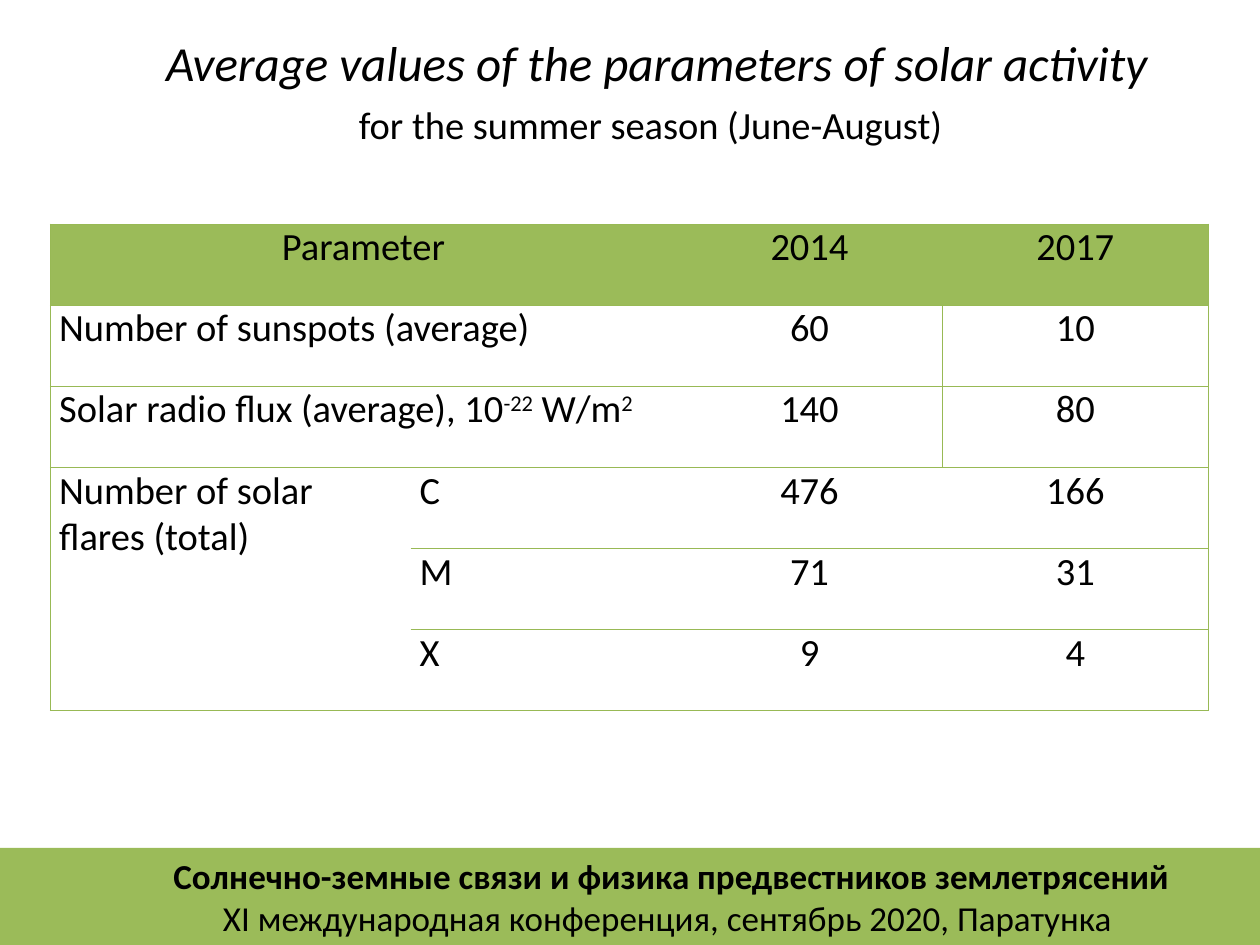
from dataclasses import dataclass

from lxml import etree
from pptx import Presentation
from pptx.dml.color import RGBColor
from pptx.enum import shapes, text
from pptx.oxml import ns
from pptx.util import Inches, Pt

COLORS = {"green": "9BBB59", "border": "98B955", "black": "000000"}
FONT = "Calibri"
CENTER = text.PP_ALIGN.CENTER
LEFT = text.PP_ALIGN.LEFT


@dataclass(frozen=True)
class Line:
    words: str
    size: int
    bold: bool = False
    italic: bool = False
    align: text.PP_ALIGN = CENTER


@dataclass(frozen=True)
class Entry:
    row: int
    col: int
    words: tuple[str, ...]
    align: text.PP_ALIGN = CENTER
    rows: int = 1
    cols: int = 1


def style(paragraph, line: Line) -> None:
    paragraph.alignment = line.align
    font = paragraph.font
    font.name = FONT
    font.size = Pt(line.size)
    font.bold = line.bold
    font.italic = line.italic
    font.color.rgb = RGBColor.from_string(COLORS["black"])


def add_lines(slide, left: float, top: float, width: float, height: float,
              lines: list[Line], wrap: bool = True) -> None:
    frame = slide.shapes.add_textbox(
        Inches(left), Inches(top), Inches(width), Inches(height)).text_frame
    frame.word_wrap = wrap
    frame.auto_size = text.MSO_AUTO_SIZE.SHAPE_TO_FIT_TEXT
    for index, line in enumerate(lines):
        paragraph = frame.add_paragraph() if index else frame.paragraphs[0]
        paragraph.add_run().text = line.words
        style(paragraph, line)


def set_borders(cell, sides: dict[str, bool]) -> None:
    properties = cell._tc.get_or_add_tcPr()
    for side, visible in sides.items():
        edge = etree.SubElement(properties, ns.qn(f"a:ln{side}"), w=str(Pt(0.75)))
        if visible:
            fill = etree.SubElement(edge, ns.qn("a:solidFill"))
            etree.SubElement(fill, ns.qn("a:srgbClr"), val=COLORS["border"])
        else:
            etree.SubElement(edge, ns.qn("a:noFill"))


def fill_entry(table, entry: Entry) -> None:
    cell = table.cell(entry.row, entry.col)
    if entry.rows > 1 or entry.cols > 1:
        cell.merge(table.cell(entry.row + entry.rows - 1, entry.col + entry.cols - 1))
    paragraph = cell.text_frame.paragraphs[0]
    for index, part in enumerate(entry.words):
        run = paragraph.add_run()
        run.text = part
        if index % 2:
            run._r.get_or_add_rPr().set("baseline", "30000")
    style(paragraph, Line("", 22, align=entry.align))


def add_solar_table(slide) -> None:
    row_count, col_count = 6, 4
    table = slide.shapes.add_table(
        row_count, col_count, Inches(0.4), Inches(1.78), Inches(9.19), Inches(3.86)).table
    table.first_row = table.horz_banding = False
    for column, width in zip(table.columns, (2.86, 2.11, 2.11, 2.11)):
        column.width = Inches(width)

    for row in range(row_count):
        for col in range(col_count):
            cell = table.cell(row, col)
            cell.margin_left = cell.margin_right = Inches(0.07)
            cell.margin_top = cell.margin_bottom = 0
            year_divider = row in (1, 2)
            set_borders(cell, {
                "L": col == 0 or (col == 3 and year_divider),
                "R": col == 3 or (col == 2 and year_divider),
                "T": col > 0 or row <= 3,
                "B": col > 0 or row != 4,
            })
            if row == 0:
                cell.fill.solid()
                cell.fill.fore_color.rgb = RGBColor.from_string(COLORS["green"])
            else:
                cell.fill.background()

    labels = [
        Entry(0, 0, ("Parameter",), cols=2),
        Entry(1, 0, ("Number of sunspots (average)",), LEFT, cols=2),
        Entry(2, 0, ("Solar radio flux (average), 10", "-22", " W/m", "2"), LEFT, cols=2),
        Entry(3, 0, ("Number of solar flares (total)",), LEFT, rows=3),
    ]
    flare_classes = [Entry(row, 1, (name,), LEFT) for row, name in enumerate("CMX", 3)]
    years = {
        2: ("2014", "60", "140", "476", "71", "9"),
        3: ("2017", "10", "80", "166", "31", "4"),
    }
    values = [Entry(row, col, (value,))
              for col, column in years.items() for row, value in enumerate(column)]
    for entry in labels + flare_classes + values:
        fill_entry(table, entry)


def main() -> None:
    presentation = Presentation()
    presentation.slide_width = Inches(10)
    presentation.slide_height = Inches(7.5)
    slide = presentation.slides.add_slide(presentation.slide_layouts[6])

    footer = slide.shapes.add_shape(
        shapes.MSO_SHAPE.RECTANGLE, 0, Inches(6.73), Inches(10), Inches(0.77))
    footer.shadow.inherit = False
    footer.fill.solid()
    footer.fill.fore_color.rgb = RGBColor.from_string(COLORS["green"])
    footer.line.fill.background()
    add_lines(slide, 0.98, 6.73, 8.7, 0.77, [
        Line("Солнечно-земные связи и физика предвестников землетрясений", 20, bold=True),
        Line("XI международная конференция, сентябрь 2020, Паратунка ", 20),
    ])

    add_solar_table(slide)
    add_lines(slide, 1.22, 0.21, 8.23, 0.57, [
        Line("Average values of the parameters of solar activity", 28, italic=True, align=LEFT),
    ])
    add_lines(slide, 2.6, 0.75, 5.06, 0.47, [
        Line(" for the summer season (June-August)", 22),
    ], wrap=False)
    presentation.save("out.pptx")


if __name__ == "__main__":
    main()
